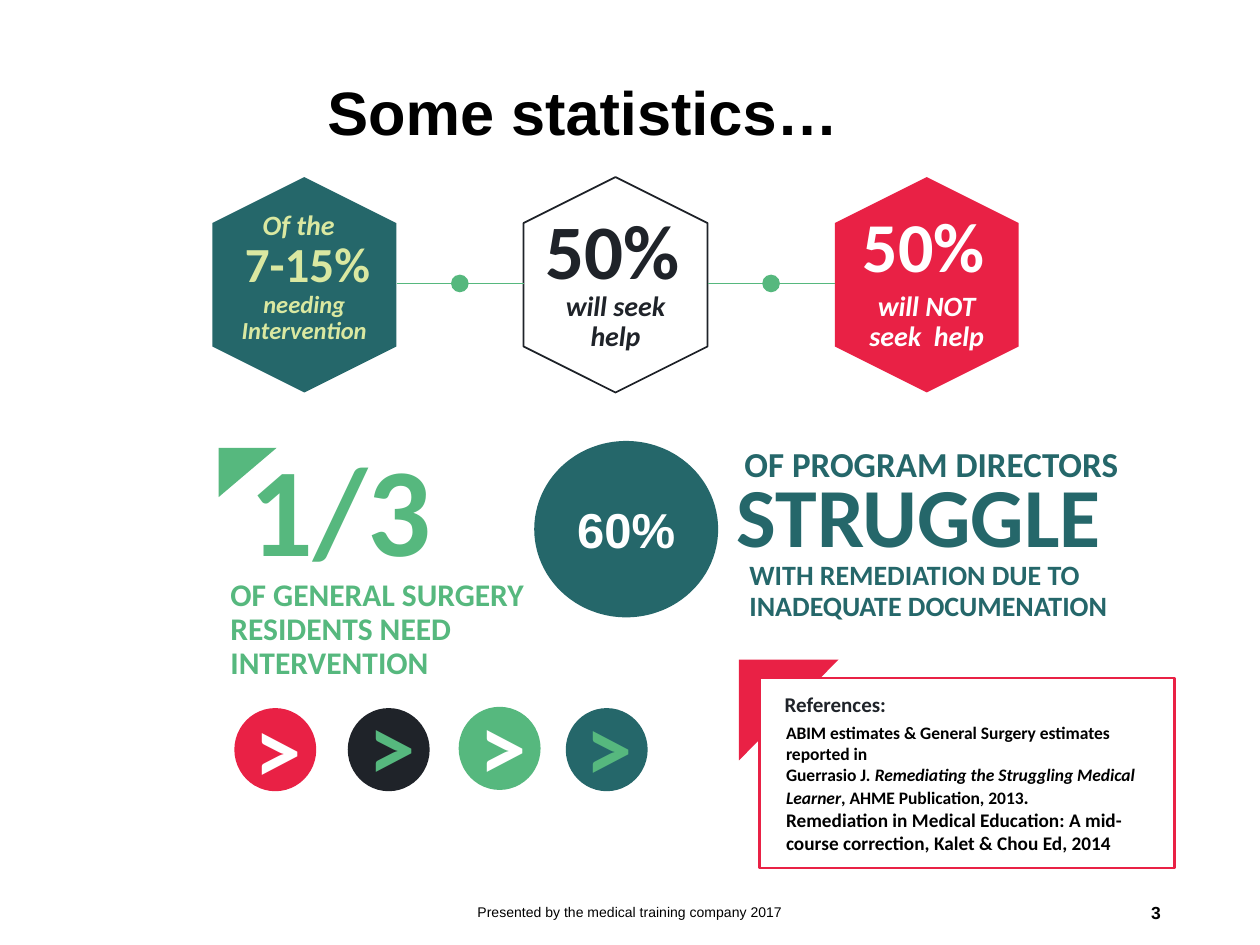
from dataclasses import dataclass
from typing import Optional

from lxml import etree
from pptx import Presentation
from pptx import util as u
from pptx.dml.color import RGBColor
from pptx.enum import shapes, text
from pptx.oxml.ns import qn

PX = u.Inches(1) // 100  # 100 px to the inch

TEAL = RGBColor(0x25, 0x67, 0x6A)
GREEN = RGBColor(0x56, 0xB8, 0x7E)
RED = RGBColor(0xE9, 0x21, 0x45)
INK = RGBColor(0x1F, 0x23, 0x29)
LIME = RGBColor(0xDA, 0xE8, 0xA1)
WHITE = RGBColor(0xFF, 0xFF, 0xFF)
BLACK = RGBColor(0, 0, 0)

LEFT, CENTER, RIGHT = text.PP_ALIGN.LEFT, text.PP_ALIGN.CENTER, text.PP_ALIGN.RIGHT
TOP, MIDDLE = text.MSO_ANCHOR.TOP, text.MSO_ANCHOR.MIDDLE
SHAPE = shapes.MSO_SHAPE


@dataclass
class Box:
    left: int
    top: int
    width: int
    height: int

    def emu(self) -> list[int]:
        return [n * PX for n in (self.left, self.top, self.width, self.height)]


@dataclass
class Label:
    box: Box
    words: str
    size: int
    color: RGBColor
    font: str = "Calibri"
    bold: bool = True
    italic: bool = False
    align: text.PP_ALIGN = LEFT
    anchor: text.MSO_ANCHOR = TOP
    spacing: float = 0.9


@dataclass
class Badge:
    left: int
    top: int
    fill: RGBColor
    arrow: Box
    arrow_color: RGBColor


@dataclass
class Piece:
    words: str
    size: int = 10
    italic: bool = False


def style_font(font, name: str, size: int, color: RGBColor, bold: bool, italic: bool) -> None:
    font.name, font.size = name, u.Pt(size)
    font.bold, font.italic = bold, italic
    font.color.rgb = color


def fill_text(shape, label: Label) -> None:
    frame = shape.text_frame
    frame.word_wrap = True
    frame.vertical_anchor = label.anchor
    frame.text = label.words
    for paragraph in frame.paragraphs:
        paragraph.alignment = label.align
        paragraph.line_spacing = label.spacing
        for run in paragraph.runs:
            style_font(run.font, label.font, label.size, label.color, label.bold, label.italic)


def add_label(slide, label: Label) -> None:
    fill_text(slide.shapes.add_textbox(*label.box.emu()), label)


def add_figure(slide, kind: shapes.MSO_SHAPE, box: Box, fill: Optional[RGBColor],
               line: Optional[RGBColor] = None, weight: float = 1, rotation: int = 0):
    shape = slide.shapes.add_shape(kind, *box.emu())
    shape.shadow.inherit = False
    shape.rotation = rotation
    if fill is None:
        shape.fill.background()
    else:
        shape.fill.solid()
        shape.fill.fore_color.rgb = fill
    if line is None:
        shape.line.fill.background()
    else:
        shape.line.color.rgb = line
        shape.line.width = u.Pt(weight)
    return shape


def add_link(slide, left: int) -> None:
    """Horizontal line between two hexagons with a dot in its middle."""
    line = slide.shapes.add_connector(
        shapes.MSO_CONNECTOR.STRAIGHT, left * PX, 225 * PX, (left + 101) * PX, 225 * PX)
    line.line.color.rgb = GREEN
    line.line.width = u.Pt(1)
    etree.SubElement(line._element.spPr, qn("a:effectLst"))
    add_figure(slide, SHAPE.OVAL, Box(left + 43, 218, 14, 14), GREEN)


def add_references(slide, box: Box, paragraphs: list[list[Piece]]) -> None:
    frame = slide.shapes.add_textbox(*box.emu()).text_frame
    frame.word_wrap = True
    for index, pieces in enumerate(paragraphs):
        paragraph = frame.add_paragraph() if index else frame.paragraphs[0]
        for piece in pieces:
            run = paragraph.add_run()
            run.text = piece.words
            style_font(run.font, "Calibri", piece.size, BLACK, True, piece.italic)


HEXAGONS = [(TEAL, None), (None, INK), (RED, None)]

LABELS = [
    # Title and footer
    Label(Box(250, 17, 471, 150), "Some statistics…", 35, BLACK, "Arial", anchor=MIDDLE),
    Label(Box(706, 704, 225, 40), "3", 10, BLACK, "Arial", align=RIGHT, anchor=MIDDLE, spacing=1),
    Label(Box(331, 704, 338, 40), "Presented by the medical training company 2017", 8,
          BLACK, "Arial", bold=False, align=CENTER, anchor=MIDDLE, spacing=1),
    # Hexagons
    Label(Box(175, 163, 129, 31), "Of the ", 16, LIME, italic=True, align=CENTER),
    Label(Box(177, 180, 134, 52), "7-15%", 28, LIME, align=CENTER, spacing=1),
    Label(Box(177, 227, 129, 53), "needing Intervention", 14, LIME, italic=True, align=CENTER),
    Label(Box(419, 156, 134, 84), "50%", 44, INK, align=CENTER, spacing=1),
    Label(Box(424, 227, 129, 53), "will seek help", 16, INK, italic=True, align=CENTER),
    Label(Box(666, 156, 134, 77), "50%", 40, WHITE, align=CENTER, spacing=1),
    Label(Box(671, 227, 129, 53), "will NOT seek  help", 16, WHITE, italic=True, align=CENTER),
    # Residents
    Label(Box(188, 337, 199, 131), "1/3", 72, GREEN, spacing=1),
    Label(Box(173, 455, 281, 83), "OF GENERAL SURGERY\nRESIDENTS NEED\nINTERVENTION", 18, GREEN),
    # Program directors
    Label(Box(581, 350, 337, 37), "OF PROGRAM DIRECTORS", 20, TEAL),
    Label(Box(575, 372, 357, 83), "STRUGGLE", 48, TEAL),
    Label(Box(585, 441, 337, 59), "WITH REMEDIATION DUE TO INADEQUATE DOCUMENATION", 16, TEAL),
]

BADGES = [
    Badge(186, 562, RED, Box(170, 543, 101, 91), WHITE),
    Badge(276, 562, INK, Box(270, 540, 83, 92), GREEN),
    Badge(364, 561, GREEN, Box(358, 540, 83, 92), WHITE),
    Badge(449, 562, TEAL, Box(442, 541, 83, 92), GREEN),
]

REFERENCES = [
    [Piece("ABIM estimates & General Surgery estimates reported in")],
    [Piece("Guerrasio J"), Piece(". Remediating the Struggling Medical Learner", italic=True),
     Piece(", AHME Publication, 2013"), Piece(".", 11)],
    [Piece("Remediation in Medical Education: A mid-course correction, Kalet & Chou Ed, 2014", 11)],
]


def main() -> None:
    presentation = Presentation()
    presentation.slide_width, presentation.slide_height = 1000 * PX, 750 * PX
    slide = presentation.slides.add_slide(presentation.slide_layouts[6])

    # Row of hexagons and the links between them
    for index, (fill, line) in enumerate(HEXAGONS):
        add_figure(slide, SHAPE.HEXAGON, Box(156 + 247 * index, 153, 171, 146), fill, line,
                   rotation=90)
    for left in (315, 562):
        add_link(slide, left)

    # Corner triangle and percentage circle
    add_figure(slide, SHAPE.RIGHT_TRIANGLE, Box(177, 352, 39, 46), GREEN, rotation=90)
    circle_box = Box(424, 350, 146, 140)
    circle = add_figure(slide, SHAPE.OVAL, circle_box, TEAL)
    fill_text(circle, Label(circle_box, "60%", 28, WHITE, "Arial", align=CENTER,
                            anchor=MIDDLE, spacing=1))

    for label in LABELS:
        add_label(slide, label)

    # Round arrow badges
    for badge in BADGES:
        add_figure(slide, SHAPE.OVAL, Box(badge.left, badge.top, 65, 66), badge.fill)
        add_label(slide, Label(badge.arrow, ">", 54, badge.arrow_color, align=CENTER, spacing=1))

    # References panel
    add_figure(slide, SHAPE.RIGHT_TRIANGLE, Box(586, 524, 80, 79), RED, rotation=90)
    add_figure(slide, SHAPE.RECTANGLE, Box(603, 538, 329, 151), WHITE, RED, 1.5)
    add_label(slide, Label(Box(613, 546, 250, 45), "References:", 12, INK))
    add_references(slide, Box(614, 568, 317, 140), REFERENCES)

    presentation.save("out.pptx")


if __name__ == "__main__":
    main()
